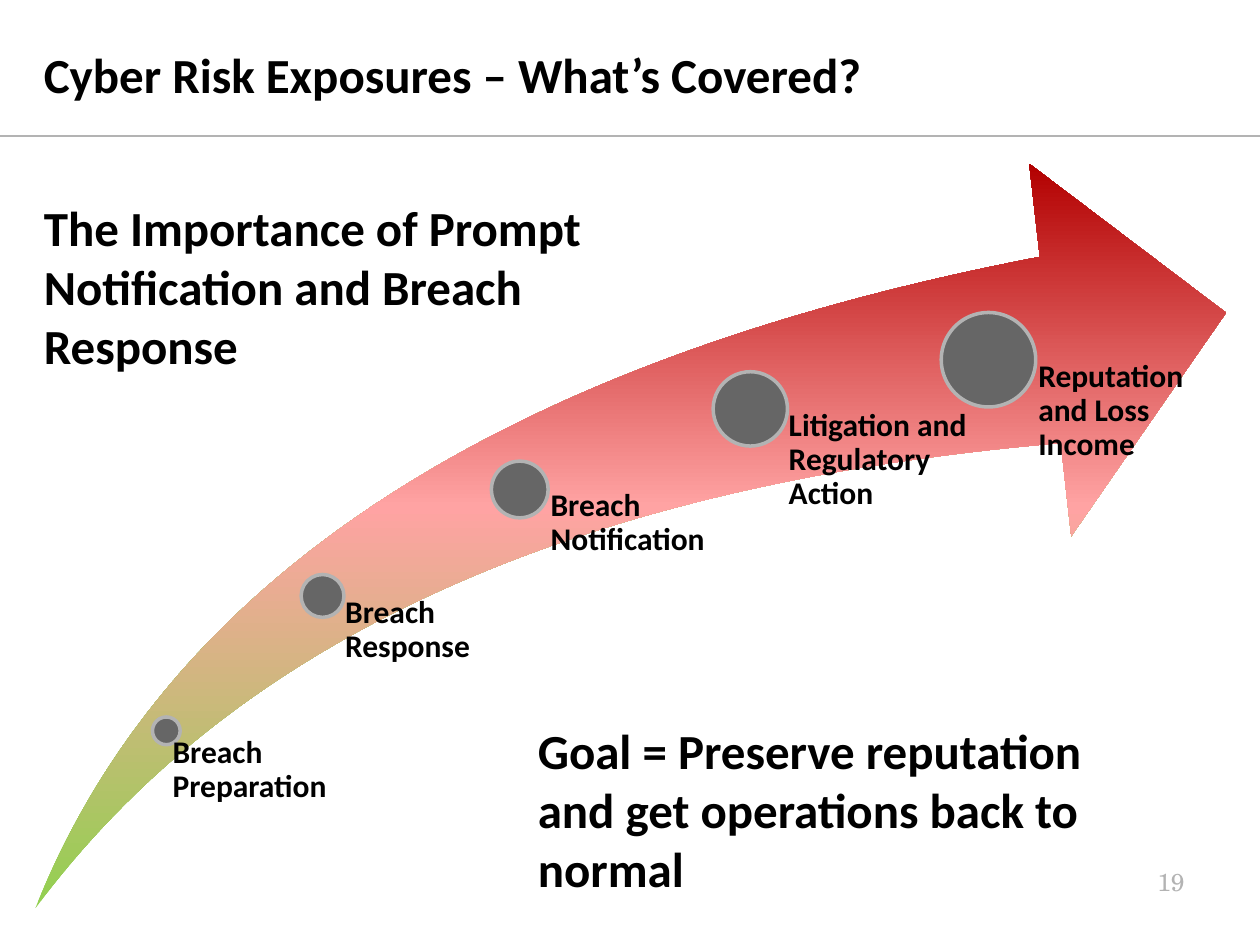
from dataclasses import dataclass

from lxml.etree import SubElement
from pptx import Presentation
from pptx.dml.color import RGBColor
from pptx.enum.shapes import MSO_CONNECTOR, MSO_SHAPE
from pptx.enum.text import MSO_ANCHOR, PP_ALIGN
from pptx.oxml.ns import qn
from pptx.util import Emu, Pt

EMU_PER_PX = 9144  # 100 px to the inch


@dataclass(frozen=True)
class Theme:
    font: str = "Calibri"
    number_font: str = "TeX Gyre Schola"
    text: str = "000000"
    muted: str = "B3B3B3"
    dot: str = "666666"
    arrow_stops: tuple = ((0, "92D050"), (54, "FFA3A3"), (100, "B20000"))
    heading_size: int = 28
    label_size: int = 18
    number_size: int = 14


def px(*lengths):
    return [Emu(length * EMU_PER_PX) for length in lengths]


class SlideBuilder:
    def __init__(self, slide, theme):
        self.slide = slide
        self.theme = theme

    def rule(self, left, top, right):
        line = self.slide.shapes.add_connector(
            MSO_CONNECTOR.STRAIGHT, *px(left, top, right, top))
        line.line.color.rgb = RGBColor.from_string(self.theme.muted)
        line.line.width = Pt(0.75)
        SubElement(line._element.spPr, qn("a:effectLst"))

    def swoosh(self, *box):
        """Arrow whose gradient runs from its tail upwards."""
        shape = self.slide.shapes.add_shape(MSO_SHAPE.SWOOSH_ARROW, *px(*box))
        shape.adjustments[0] = shape.adjustments[1] = 0.25
        shape.shadow.inherit = False
        shape.line.fill.background()
        shape.fill.gradient()
        shape.fill.gradient_angle = 90
        stops = shape._element.spPr.find(qn("a:gradFill")).find(qn("a:gsLst"))
        for stop in list(stops):
            stops.remove(stop)
        for position, color in self.theme.arrow_stops:
            stop = SubElement(stops, qn("a:gs"), pos=str(position * 1000))
            SubElement(stop, qn("a:srgbClr"), val=color)

    def dot(self, left, top, diameter):
        shape = self.slide.shapes.add_shape(
            MSO_SHAPE.OVAL, *px(left, top, diameter, diameter))
        shape.shadow.inherit = False
        shape.fill.solid()
        shape.fill.fore_color.rgb = RGBColor.from_string(self.theme.dot)
        shape.line.color.rgb = RGBColor.from_string(self.theme.muted)
        shape.line.width = Pt(2)

    def text(self, words, box, size, font=None, color=None, bold=True,
             spacing=None, align=PP_ALIGN.LEFT, anchor=MSO_ANCHOR.TOP,
             insets=(10, 5, 10, 5)):
        frame = self.slide.shapes.add_textbox(*px(*box)).text_frame
        frame.word_wrap = True
        frame.vertical_anchor = anchor
        (frame.margin_left, frame.margin_top,
         frame.margin_right, frame.margin_bottom) = px(*insets)
        paragraph = frame.paragraphs[0]
        paragraph.alignment = align
        if spacing:
            paragraph.line_spacing = spacing
        run = paragraph.add_run()
        run.text = words
        run.font.name = font or self.theme.font
        run.font.size = Pt(size)
        run.font.bold = bold
        run.font.color.rgb = RGBColor.from_string(color or self.theme.text)

    def milestone(self, words, dot, label):
        """Dot on the arrow, with a label reaching down to the arrow's base."""
        diameter = dot[2]
        left, top, width = label
        self.dot(*dot)
        self.text(words, (left, top, width, ARROW_BOTTOM - top),
                  self.theme.label_size, spacing=0.9,
                  insets=(round(diameter * 0.53), 0, 0, 0))


ARROW_TOP, ARROW_BOTTOM = 130, 721

# words, dot (left, top, diameter), label (left, top, width)
MILESTONES = [
    ("Breach Preparation", (121, 569, 22), (125, 584, 179)),
    ("Breach Response", (239, 456, 34), (256, 473, 157)),
    ("Breach Notification", (390, 366, 45), (413, 388, 182)),
    ("Litigation and Regulatory Action", (566, 295, 59), (595, 325, 189)),
    ("Reputation and Loss Income", (747, 248, 75), (784, 286, 189)),
]


def main():
    presentation = Presentation()
    presentation.slide_width, presentation.slide_height = px(1000, 750)
    slide = presentation.slides.add_slide(presentation.slide_layouts[6])
    theme = Theme()
    builder = SlideBuilder(slide, theme)

    builder.rule(0, 108, 1000)
    builder.text("Cyber Risk Exposures – What’s Covered?", (25, 16, 717, 92),
                 theme.heading_size, spacing=0.85, anchor=MSO_ANCHOR.MIDDLE)
    builder.swoosh(28, ARROW_TOP, 945, ARROW_BOTTOM - ARROW_TOP)
    for milestone in MILESTONES:
        builder.milestone(*milestone)
    builder.text("The Importance of Prompt Notification and Breach Response",
                 (25, 152, 517, 151), theme.heading_size)
    builder.text("Goal = Preserve reputation and get operations back to normal",
                 (417, 567, 492, 151), theme.heading_size)
    builder.text("19", (717, 683, 233, 52), theme.number_size,
                 font=theme.number_font, color=theme.muted, bold=False,
                 align=PP_ALIGN.RIGHT)
    presentation.save("out.pptx")


if __name__ == "__main__":
    main()
